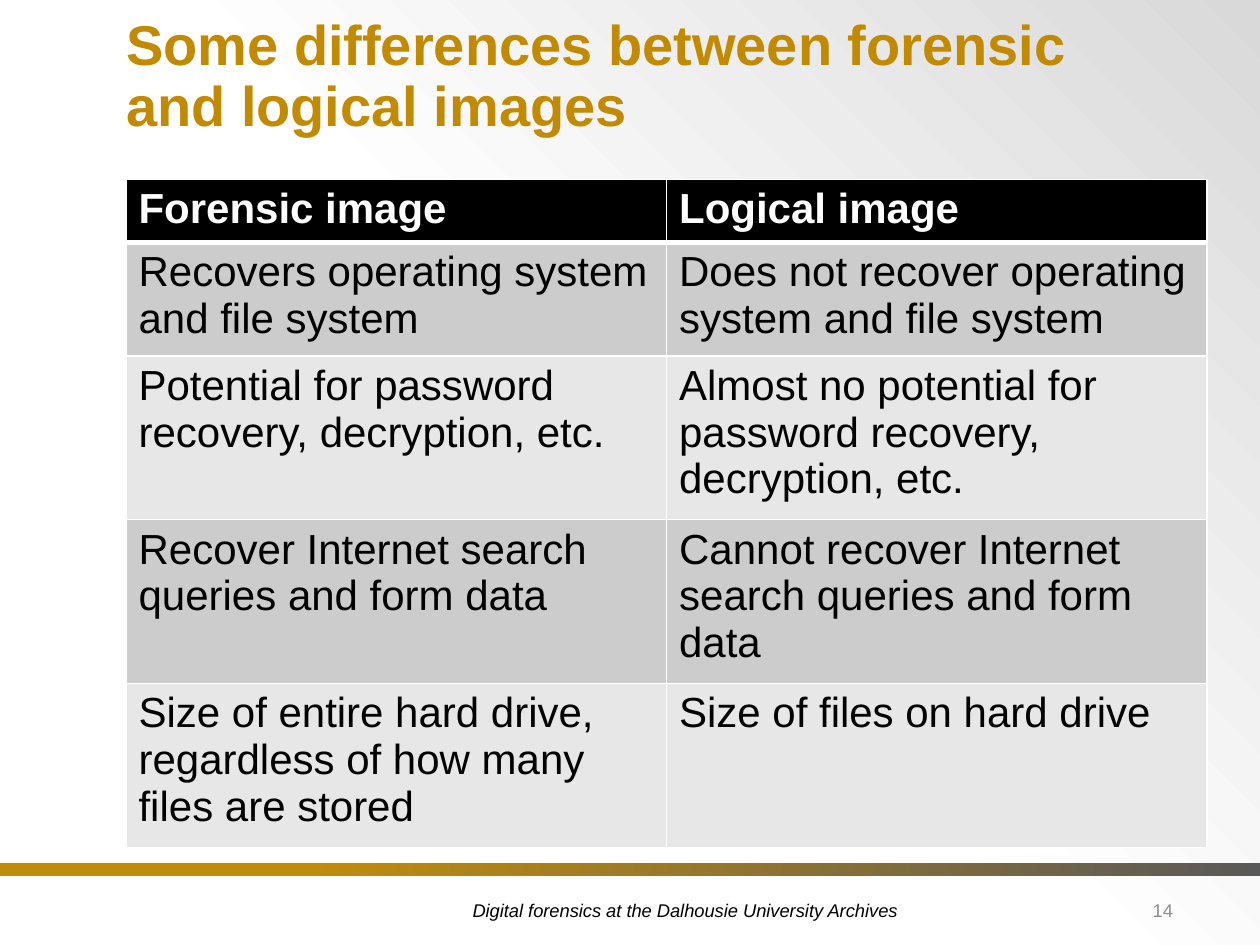
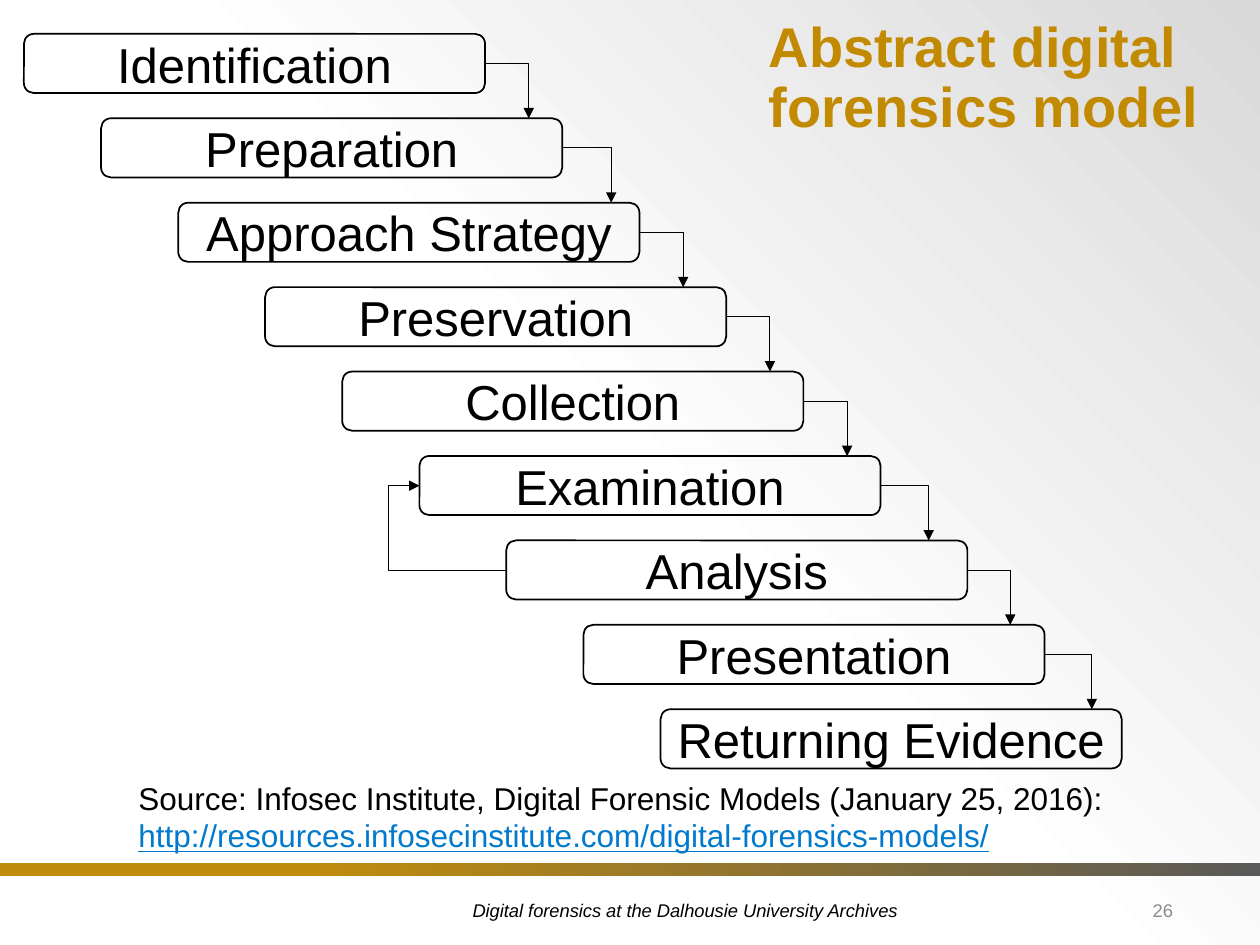
"""Build two slides on forensic imaging: a comparison table and a process cascade."""
from dataclasses import dataclass

from lxml import etree
from pptx import Presentation
from pptx import util as u
from pptx.dml import color
from pptx.enum import shapes, text
from pptx.oxml import ns

FOOTER = "Digital forensics at the Dalhousie University Archives"

COMPARISON = {
    "title": "Some differences between forensic and logical images",
    "title_box": (72, 0, 598.3, 79.2),
    "number": "14",
    "rows": [
        ("Forensic image", "Logical image"),
        ("Recovers operating system and file system",
         "Does not recover operating system and file system"),
        ("Potential for password recovery, decryption, etc.",
         "Almost no potential for password recovery, decryption, etc."),
        ("Recover Internet search queries and form data",
         "Cannot recover Internet search queries and form data"),
        ("Size of entire hard drive, regardless of how many files are stored",
         "Size of files on hard drive"),
    ],
}

MODEL = {
    "title": "Abstract digital forensics model",
    "title_box": (439.2, 2.2, 262.8, 77.8),
    "number": "26",
    "steps": [
        ("Identification", 25),
        ("Preparation", 28),
        ("Approach Strategy", 25),
        ("Preservation", 25),
        ("Collection", 25),
        ("Examination", 27.5),
        ("Analysis", 24.5),
        ("Presentation", 27),
        ("Returning Evidence", None),
    ],
    "loop": ("Analysis", "Examination"),
    "source": "Source: Infosec Institute, Digital Forensic Models (January 25, 2016): ",
    "address": "http://resources.infosecinstitute.com/digital-forensics-models/",
}


@dataclass(frozen=True)
class Theme:
    font: str = "Arial"
    gold: str = "C28A00"
    black: str = "000000"
    white: str = "FFFFFF"
    muted: str = "8C8C8C"
    link: str = "017ACD"
    row_fills: tuple = ("E7E7E7", "CCCCCC")
    background: tuple = ((0, "D9D9D9"), (0.5, "FFFFFF"))
    band: tuple = ((0.24, "C08C0C"), (1, "595959"))
    title_size: float = 32
    step_size: float = 28
    table_size: float = 24
    source_size: float = 18
    footer_size: float = 10.5


THEME = Theme()


def rgb(value):
    return color.RGBColor.from_string(value)


def points(*values):
    return [u.Pt(value) for value in values]


def paint_gradient(fill, stops, angle):
    fill.gradient()
    fill.gradient_angle = angle
    for stop, (position, value) in zip(fill.gradient_stops, stops):
        stop.position = position
        stop.color.rgb = rgb(value)


def style_run(run, size, value=THEME.black, bold=False, italic=False, underline=False):
    font = run.font
    font.name, font.size, font.color.rgb = THEME.font, u.Pt(size), rgb(value)
    font.bold, font.italic, font.underline = bold, italic, underline


def write(text_frame, words, size, align=text.PP_ALIGN.LEFT, **style):
    text_frame.word_wrap = True
    text_frame.text = words
    paragraph = text_frame.paragraphs[0]
    paragraph.alignment = align
    style_run(paragraph.runs[0], size, **style)
    return paragraph


def add_label(slide, box, words, size, anchor, **style):
    text_frame = slide.shapes.add_textbox(*points(*box)).text_frame
    text_frame.margin_left = text_frame.margin_right = 0
    text_frame.margin_top = text_frame.margin_bottom = 0
    text_frame.vertical_anchor = anchor
    return write(text_frame, words, size, **style)


def add_base_slide(presentation, content):
    slide = presentation.slides.add_slide(presentation.slide_layouts[6])
    paint_gradient(slide.background.fill, THEME.background, 225)
    band = slide.shapes.add_shape(
        shapes.MSO_SHAPE.RECTANGLE, *points(0, 493.2, 720, 7.2))
    band.shadow.inherit = False
    band.line.fill.background()
    paint_gradient(band.fill, THEME.band, 0)
    title = add_label(slide, content["title_box"], content["title"], THEME.title_size,
                      text.MSO_ANCHOR.BOTTOM, value=THEME.gold, bold=True)
    title.line_spacing = 0.9
    add_label(slide, (270, 500.4, 339.8, 39.6), FOOTER, THEME.footer_size,
              text.MSO_ANCHOR.MIDDLE, italic=True)
    add_label(slide, (609.8, 500.4, 60.5, 39.6), content["number"], THEME.footer_size,
              text.MSO_ANCHOR.MIDDLE, align=text.PP_ALIGN.RIGHT, value=THEME.muted)
    return slide


def set_borders(cell, widths):
    properties = cell._tc.get_or_add_tcPr()
    for side, width in widths.items():
        line = etree.SubElement(properties, ns.qn(f"a:ln{side}"), w=str(u.Pt(width)))
        fill = etree.SubElement(line, ns.qn("a:solidFill"))
        etree.SubElement(fill, ns.qn("a:srgbClr"), val=THEME.white)


def build_comparison(presentation):
    slide = add_base_slide(presentation, COMPARISON)
    rows = COMPARISON["rows"]
    row_height = 29.5
    table = slide.shapes.add_table(
        len(rows), len(rows[0]), *points(72, 102.5, 617.8, row_height * len(rows))).table
    for row_index, row in enumerate(rows):
        header = row_index == 0
        table.rows[row_index].height = u.Pt(row_height)
        for column_index, words in enumerate(row):
            cell = table.cell(row_index, column_index)
            write(cell.text_frame, words, THEME.table_size, bold=header,
                  value=THEME.white if header else THEME.black)
            set_borders(cell, {"L": 1, "R": 1, "T": 3 if row_index == 1 else 1,
                               "B": 3 if header else 1})
            cell.fill.solid()
            cell.fill.fore_color.rgb = rgb(
                THEME.black if header else THEME.row_fills[row_index % 2])


def add_arrow(slide, start, end, preset):
    connector = slide.shapes.add_connector(
        shapes.MSO_CONNECTOR.ELBOW, *points(*start, *end))
    connector.line.width = u.Pt(0.5)
    connector.line.color.rgb = rgb(THEME.black)
    etree.SubElement(connector.line._get_or_add_ln(), ns.qn("a:tailEnd"), type="triangle")
    properties = connector._element.spPr
    etree.SubElement(properties, ns.qn("a:effectLst"))
    properties.find(ns.qn("a:prstGeom")).set("prst", preset)
    return properties


def add_loop(slide, start, end):
    properties = add_arrow(slide, end, start, "bentConnector3")
    properties.find(ns.qn("a:xfrm")).set("rot", str(180 * 60000))
    geometry = properties.find(ns.qn("a:prstGeom"))
    guides = geometry.find(ns.qn("a:avLst"))
    if guides is None:
        guides = etree.SubElement(geometry, ns.qn("a:avLst"))
    etree.SubElement(guides, ns.qn("a:gd"), name="adj1", fmla="val 136200")


def build_model(presentation):
    slide = add_base_slide(presentation, MODEL)
    source = slide.shapes.add_textbox(*points(72, 441.4, 598.3, 51.1))
    paragraph = write(source.text_frame, MODEL["source"], THEME.source_size)
    address = paragraph.add_run()
    address.text = MODEL["address"]
    style_run(address, THEME.source_size, THEME.link, underline=True)

    width, height, pitch = 263.5, 33.8, 48.24
    left_middles = {}
    for index, (name, reach) in enumerate(MODEL["steps"]):
        left = 13.7 + 44.1 * index + 5.5 * (index // 3)
        top = 19.4 + pitch * index
        middle = top + height / 2
        left_middles[name] = (left, middle)
        step = slide.shapes.add_shape(
            shapes.MSO_SHAPE.ROUNDED_RECTANGLE, *points(left, top, width, height))
        step.shadow.inherit = False
        step.fill.background()
        step.line.color.rgb = rgb(THEME.black)
        step.line.width = u.Pt(1)
        step.text_frame.vertical_anchor = text.MSO_ANCHOR.MIDDLE
        write(step.text_frame, name, THEME.step_size, align=text.PP_ALIGN.CENTER)
        if reach:
            right = left + width
            add_arrow(slide, (right, middle), (right + reach, top + pitch),
                      "bentConnector2")
    add_loop(slide, *(left_middles[name] for name in MODEL["loop"]))


def main():
    presentation = Presentation()
    presentation.slide_width, presentation.slide_height = points(720, 540)
    build_comparison(presentation)
    build_model(presentation)
    presentation.save("out.pptx")


if __name__ == "__main__":
    main()
